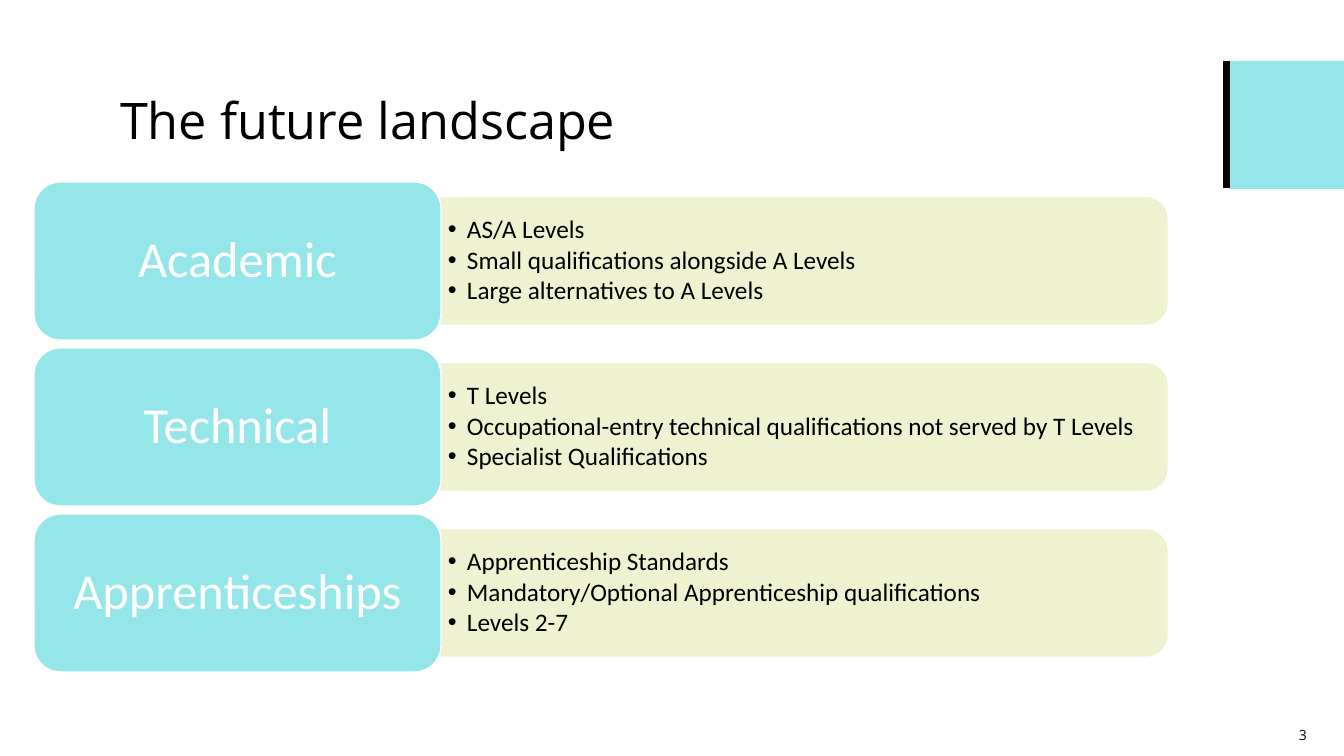
from lxml.etree import SubElement
from pptx import Presentation
from pptx.dml.color import RGBColor
from pptx.enum.shapes import MSO_CONNECTOR, MSO_SHAPE
from pptx.enum.text import MSO_ANCHOR, PP_ALIGN
from pptx.oxml.ns import qn
from pptx.util import Emu, Pt

AQUA, CREAM, BLACK, WHITE = "94E6E9", "EEF1CC", "000000", "FFFFFF"
HEADING, BODY = "Open Sans", "Calibri"


def px(n):
    return Emu(round(n * 914400 / 100.8))


def rgb(value):
    return RGBColor.from_string(value)


class SlideBuilder:
    def __init__(self, prs):
        self.s = prs.slides.add_slide(prs.slide_layouts[6])

    def shape(self, kind, x, y, w, h, fill, line=None, alpha=None):
        sp = self.s.shapes.add_shape(kind, px(x), px(y), px(w), px(h))
        sp.shadow.inherit = False
        sp.fill.solid()
        sp.fill.fore_color.rgb = rgb(fill)
        if line:
            sp.line.color.rgb = rgb(line)
            sp.line.width = Pt(1)
        else:
            sp.line.fill.background()
        if alpha:
            for clr in sp._element.spPr.iter(qn("a:srgbClr")):
                SubElement(clr, qn("a:alpha"), val=str(alpha * 1000))
        return sp

    def line(self, x1, y1, x2, y2, color, width):
        c = self.s.shapes.add_connector(
            MSO_CONNECTOR.STRAIGHT, px(x1), px(y1), px(x2), px(y2))
        c.line.color.rgb = rgb(color)
        c.line.width = Pt(width)
        SubElement(c._element.spPr, qn("a:effectLst"))

    def box(self, x, y, w, h):
        return self.s.shapes.add_textbox(px(x), px(y), px(w), px(h))

    def text(self, sp, lines, size, font, color=BLACK, align=PP_ALIGN.LEFT,
             inset=(10, 5), bullets=False):
        tf = sp.text_frame
        tf.word_wrap = True
        tf.vertical_anchor = MSO_ANCHOR.MIDDLE
        tf.margin_left = tf.margin_right = px(inset[0])
        tf.margin_top = tf.margin_bottom = px(inset[1])
        for i, line in enumerate(lines):
            p = tf.add_paragraph() if i else tf.paragraphs[0]
            p.alignment = align
            p.line_spacing = 0.9
            if bullets:
                self.bullet(p)
            r = p.add_run()
            r.text = line
            r.font.size = Pt(size)
            r.font.name = font
            r.font.color.rgb = rgb(color)

    def bullet(self, p):
        p.level = 1
        p.space_after = Pt(2.4)
        pPr = p._p.get_or_add_pPr()
        pPr.set("marL", str(px(19)))
        pPr.set("indent", str(-px(19)))
        SubElement(pPr, qn("a:buFont"), typeface="Arial")
        SubElement(pPr, qn("a:buChar"), char="•")

    def route(self, y, name, items):
        # Panel: turned a quarter so that its rounded end faces right
        x, w, h, length = 34, 407, 158, 726
        depth = 126
        left, mid = x + w, y + h // 2
        panel = self.shape(MSO_SHAPE.ROUND_2_SAME_RECTANGLE,
                           left + (length - depth) // 2, mid - length // 2,
                           depth, length, CREAM, CREAM, alpha=90)
        panel.rotation = 90
        self.text(self.box(left, mid - 57, 719, 114), items, 18, BODY,
                  inset=(7, 4), bullets=True)

        # Name card
        card = self.shape(MSO_SHAPE.ROUNDED_RECTANGLE, x, y, w, h, AQUA, WHITE)
        self.text(card, [name], 36, BODY, WHITE, PP_ALIGN.CENTER, (15, 7))


ROUTES = [
    ("Academic", ["AS/A Levels",
                  "Small qualifications alongside A Levels",
                  "Large alternatives to A Levels"]),
    ("Technical", ["T Levels",
                   "Occupational-entry technical qualifications not served by T Levels",
                   "Specialist Qualifications"]),
    ("Apprenticeships", ["Apprenticeship Standards",
                         "Mandatory/Optional Apprenticeship qualifications",
                         "Levels 2-7"]),
]


def main():
    prs = Presentation()
    prs.slide_width, prs.slide_height = px(1344), px(756)
    b = SlideBuilder(prs)

    # Corner accent
    b.shape(MSO_SHAPE.RECTANGLE, 1229, 61, 115, 128, AQUA)
    b.line(1227, 61, 1227, 188, BLACK, 5)

    # Page number and title
    b.text(b.box(1015, 716, 302, 40), ["3"], 10, HEADING, align=PP_ALIGN.RIGHT)
    b.text(b.box(110, 62, 1099, 123), ["The future landscape"], 36, HEADING)

    # Three routes
    for i, (name, items) in enumerate(ROUTES):
        b.route(182 + i * 166, name, items)

    prs.save("out.pptx")


if __name__ == "__main__":
    main()
